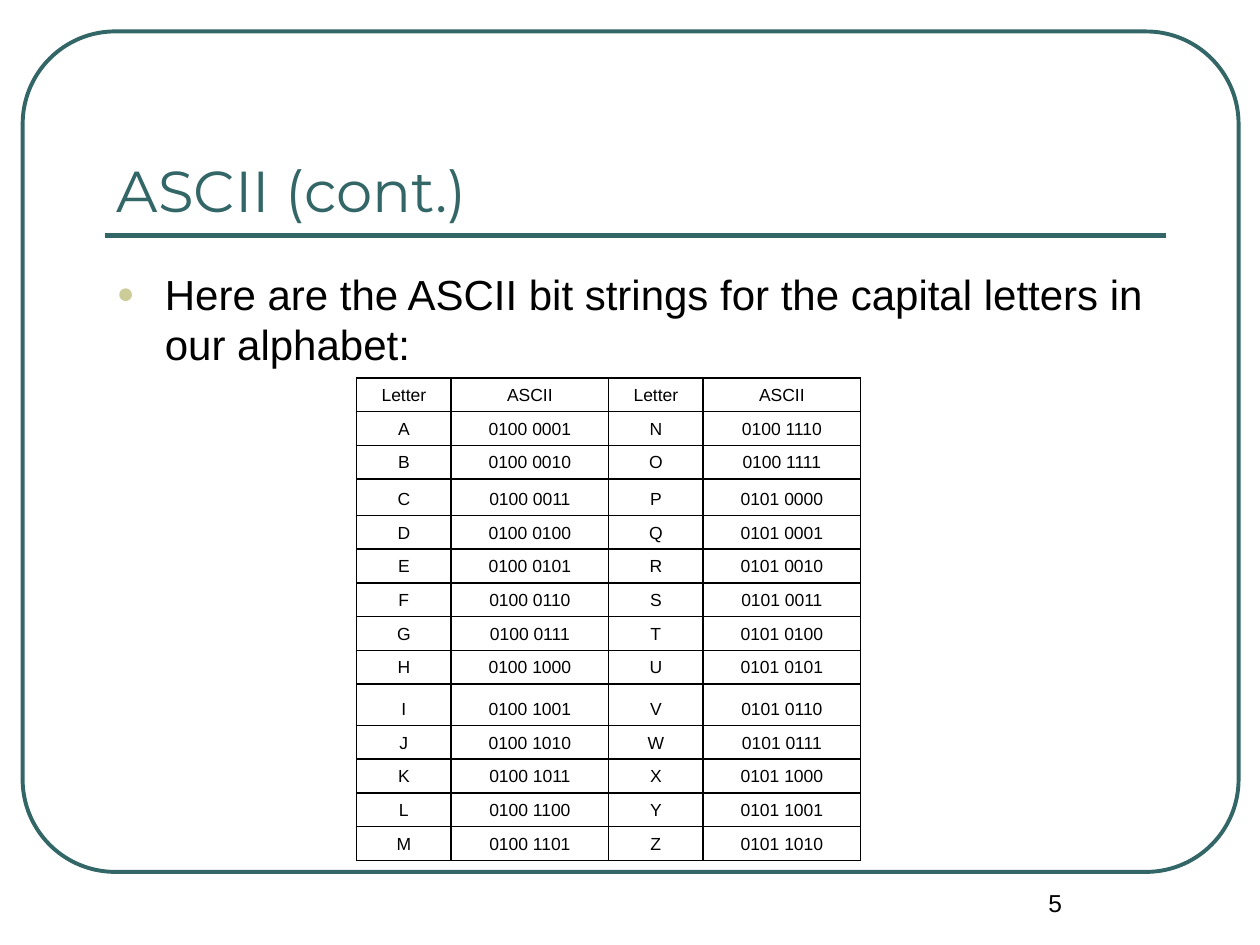
"""Build the slide listing the ASCII bit strings of the capital letters."""
from lxml import etree
from pptx import Presentation
from pptx import util as u
from pptx.dml.color import RGBColor
from pptx.enum import shapes, text
from pptx.oxml import ns

COLORS = {"teal": "336666", "khaki": "CCCC99", "ink": "000000", "paper": "FFFFFF"}
Inches = u.Inches


def add_element(parent, tag, **attributes):
    return etree.SubElement(parent, ns.qn(tag), attributes)


def write(frame, words, size, font="Arial", color="ink", anchor="TOP", align="LEFT"):
    frame.word_wrap = True
    frame.vertical_anchor = text.MSO_ANCHOR[anchor]
    para = frame.paragraphs[0]
    para.alignment = text.PP_ALIGN[align]
    span = para.add_run()
    span.text = words
    for name, value in {"size": u.Pt(size), "name": font}.items():
        setattr(span.font, name, value)
    span.font.color.rgb = RGBColor.from_string(COLORS[color])
    return para


deck = Presentation()
deck.slide_width, deck.slide_height = Inches(10), Inches(7.5)
page = deck.slides.add_slide(deck.slide_layouts[6])

border = page.shapes.add_shape(
    shapes.MSO_SHAPE.ROUNDED_RECTANGLE,
    Inches(0.18), Inches(0.25), Inches(9.65), Inches(6.67))
border.adjustments[0] = 0.11
border.shadow.inherit = False
border.fill.background()
rule = page.shapes.add_connector(
    shapes.MSO_CONNECTOR.STRAIGHT,
    Inches(0.83), Inches(1.87), Inches(9.25), Inches(1.87))
add_element(rule._element.spPr, "a:effectLst")
for shape, width in ((border, 2.25), (rule, 3)):
    shape.line.color.rgb = RGBColor.from_string(COLORS["teal"])
    shape.line.width = u.Pt(width)

boxes = [
    ((7.5, 7, 1.75, 0.5), {"words": "5", "size": 14, "align": "CENTER"}),
    ((0.83, 0.58, 8.42, 1.25),
     {"words": "ASCII (cont.)", "size": 33, "font": "Montserrat",
      "color": "teal", "anchor": "BOTTOM"}),
    ((0.83, 2.08, 8.42, 0.92),
     {"words": "Here are the ASCII bit strings for the capital letters in our alphabet:",
      "size": 24}),
]
for place, style in boxes:
    box = page.shapes.add_textbox(*map(Inches, place))
    para = write(box.text_frame, **style)

para.space_before = u.Pt(4.8)
bullet = para._p.get_or_add_pPr()
bullet.set("marL", str(Inches(0.38)))
bullet.set("indent", str(-Inches(0.38)))
add_element(add_element(bullet, "a:buClr"), "a:srgbClr", val=COLORS["khaki"])
add_element(bullet, "a:buSzPct", val="70000")
add_element(bullet, "a:buFont", typeface="Arial")
add_element(bullet, "a:buChar", char="●")

rows = [["Letter", "ASCII"] * 2]
for first, second in zip("ABCDEFGHIJKLM", "NOPQRSTUVWXYZ"):
    row = []
    for letter in (first, second):
        bits = format(ord(letter), "08b")
        row += [letter, f"{bits[:4]} {bits[4:]}"]
    rows.append(row)

table = page.shapes.add_table(
    len(rows), 4, Inches(2.83), Inches(3), Inches(4), Inches(3.82)).table
for name in ("first_row", "horz_banding"):
    setattr(table, name, False)
for column, width in zip(table.columns, [0.75, 1.25] * 2):
    column.width = Inches(width)

tall_rows = {3: 0.29, 9: 0.33}
for r, row in enumerate(rows):
    table.rows[r].height = Inches(tall_rows.get(r, 0.26))
    for c, words in enumerate(row):
        cell = table.cell(r, c)
        write(cell.text_frame, words, 10, align="CENTER")
        cell.vertical_anchor = text.MSO_ANCHOR.BOTTOM
        properties = cell._tc.get_or_add_tcPr()
        for side in "LRTB":
            edge = add_element(properties, f"a:ln{side}", w=str(u.Pt(1)))
            add_element(add_element(edge, "a:solidFill"), "a:srgbClr", val=COLORS["ink"])
        if r:
            cell.fill.solid()
            cell.fill.fore_color.rgb = RGBColor.from_string(COLORS["paper"])
        else:
            cell.fill.background()

deck.save("out.pptx")
